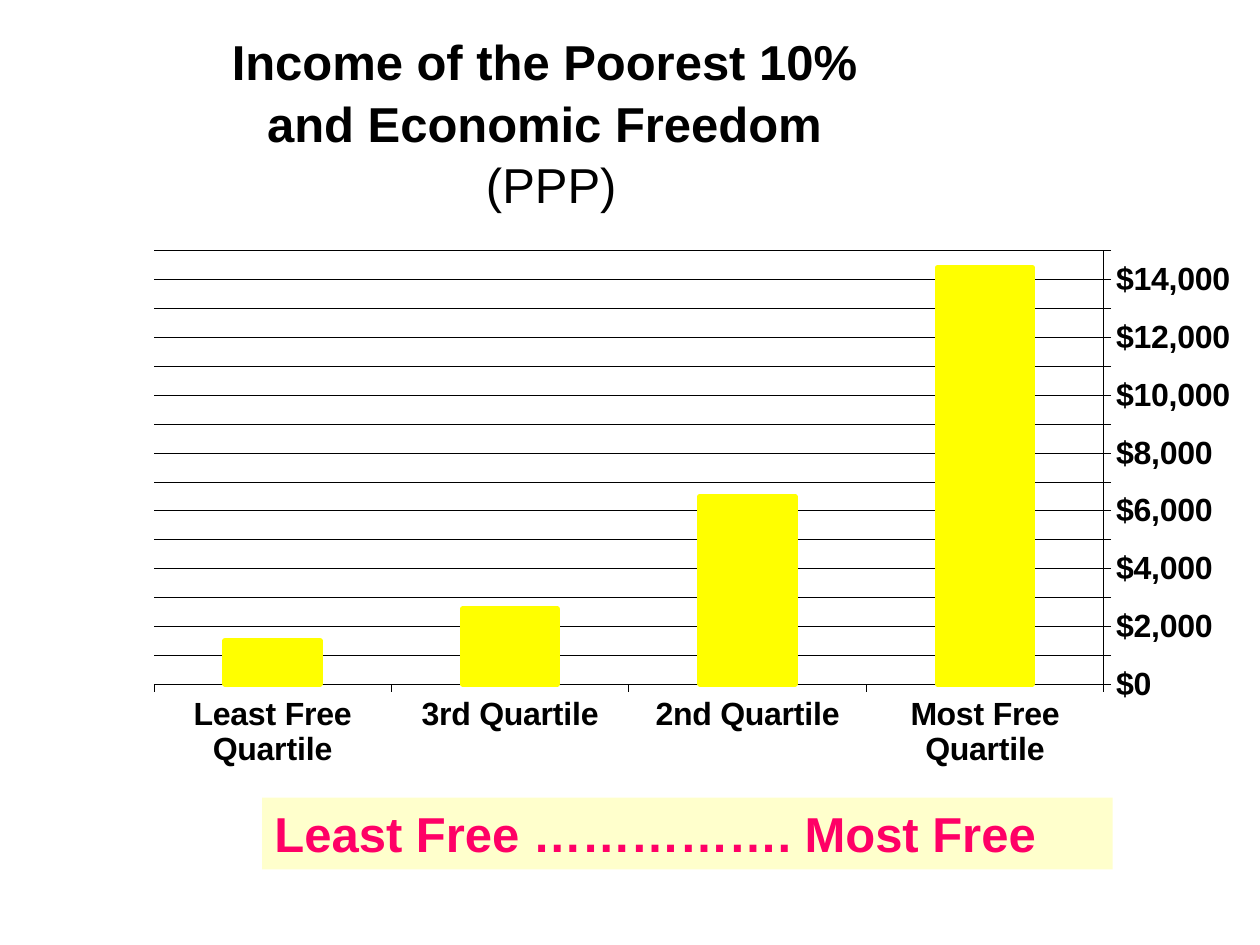
from copy import deepcopy
from lxml import etree
from pptx import Presentation, util as u
from pptx.chart.data import CategoryChartData
from pptx.dml.color import RGBColor
from pptx.enum import chart as ch, shapes, text
from pptx.oxml.ns import qn

BLACK = RGBColor(0, 0, 0)
YELLOW = RGBColor(0xFF, 0xFF, 0)
CREAM = RGBColor(0xFF, 0xFF, 0xCC)
PINK = RGBColor(0xFF, 0, 0x66)


def apply(obj, vals):
    """Set attributes from a dict."""
    for key, val in vals.items():
        setattr(obj, key, val)


class Deck:
    """Hold the style and the current slide."""

    face = "Arial"

    def __init__(self):
        self.prs = Presentation()
        apply(self.prs, {"slide_width": u.Inches(10), "slide_height": u.Inches(7.5)})
        self.slide = self.prs.slides.add_slide(self.prs.slide_layouts[5])

    def style(self, font, size, color, bold=True):
        apply(font, {"name": self.face, "size": u.Pt(size), "bold": bold})
        font.color.rgb = color

    def line(self, fmt, color, width):
        fmt.color.rgb = color
        fmt.width = u.Pt(width)

    def title(self, box, lines):
        shape = self.slide.shapes.title
        apply(shape, dict(zip(("left", "top", "width", "height"), map(u.Inches, box))))
        frame = shape.text_frame
        apply(frame, {"word_wrap": True, "auto_size": text.MSO_AUTO_SIZE.NONE,
                      "vertical_anchor": text.MSO_ANCHOR.MIDDLE})
        para = frame.paragraphs[0]
        apply(para, {"alignment": text.PP_ALIGN.CENTER, "line_spacing": 1.05})
        for i, (words, bold) in enumerate(lines):
            if i:
                para.add_line_break()
                para._p.findall(qn("a:br"))[-1].append(deepcopy(run._r.rPr))
            run = para.add_run()
            run.text = words
            self.style(run.font, 28, BLACK, bold)

    def chart(self, box, cats, vals, plot):
        data = CategoryChartData()
        data.categories = cats
        data.add_series("Series 1", vals)
        chart = self.slide.shapes.add_chart(
            ch.XL_CHART_TYPE.COLUMN_CLUSTERED, *map(u.Inches, box), data).chart
        apply(chart, {"has_legend": False, "has_title": False})
        self.style(chart.font, 18.3, BLACK)
        bars = chart.plots[0]
        apply(bars, {"gap_width": 150, "vary_by_categories": False})
        fmt = bars.series[0].format
        fmt.fill.solid()
        fmt.fill.fore_color.rgb = YELLOW
        self.line(fmt.line, YELLOW, 3.04)

        cat, val = chart.category_axis, chart.value_axis
        apply(cat, {"reverse_order": True, "has_major_gridlines": False,
                    "tick_label_position": ch.XL_TICK_LABEL_POSITION.LOW})
        apply(val, {"minimum_scale": 0, "maximum_scale": 15000, "major_unit": 1000,
                    "has_major_gridlines": True})
        apply(val.tick_labels, {"number_format": "\\$#,##0",
                                "number_format_is_linked": False})
        for axis in (cat, val):
            axis.major_tick_mark = ch.XL_TICK_MARK.OUTSIDE
            self.style(axis.tick_labels.font, 18.3, BLACK)
            self.line(axis.format.line, BLACK, 0.25)
        self.line(val.major_gridlines.format.line, BLACK, 0.25)
        self.place(chart, plot)

    def place(self, chart, plot):
        area = chart._chartSpace.find(".//" + qn("c:plotArea"))
        for old in area.findall(qn("c:layout")):
            area.remove(old)
        layout = etree.Element(qn("c:layout"))
        manual = etree.SubElement(layout, qn("c:manualLayout"))
        tags = {"layoutTarget": "inner", "xMode": "edge", "yMode": "edge",
                **dict(zip("xywh", plot))}
        for tag, val in tags.items():
            etree.SubElement(manual, qn("c:" + tag)).set("val", str(val))
        area.insert(0, layout)

    def banner(self, box, words):
        shape = self.slide.shapes.add_shape(
            shapes.MSO_SHAPE.RECTANGLE, *map(u.Inches, box))
        shape.shadow.inherit = False
        shape.fill.solid()
        shape.fill.fore_color.rgb = CREAM
        shape.line.fill.background()
        frame = shape.text_frame
        apply(frame, {"word_wrap": True, "vertical_anchor": text.MSO_ANCHOR.TOP,
                      "auto_size": text.MSO_AUTO_SIZE.SHAPE_TO_FIT_TEXT})
        para = frame.paragraphs[0]
        para.alignment = text.PP_ALIGN.LEFT
        run = para.add_run()
        run.text = words
        self.style(run.font, 28, PINK)


def main():
    deck = Deck()
    deck.title((0, 0, 8.75, 1.92), [("Income of the Poorest 10% ", True),
                                    ("and Economic Freedom ", True),
                                    ("(PPP)", False)])
    deck.chart((0.03, 1.81, 9.92, 4.47),
               ("Most Free Quartile", "2nd Quartile", "3rd Quartile", "Least Free Quartile"),
               (14400, 6500, 2600, 1500), (0.12, 0.04, 0.76, 0.77))
    deck.banner((2.08, 6.33, 6.75, 0.57), "Least Free ……………. Most Free")
    deck.prs.save("out.pptx")


if __name__ == "__main__":
    main()
